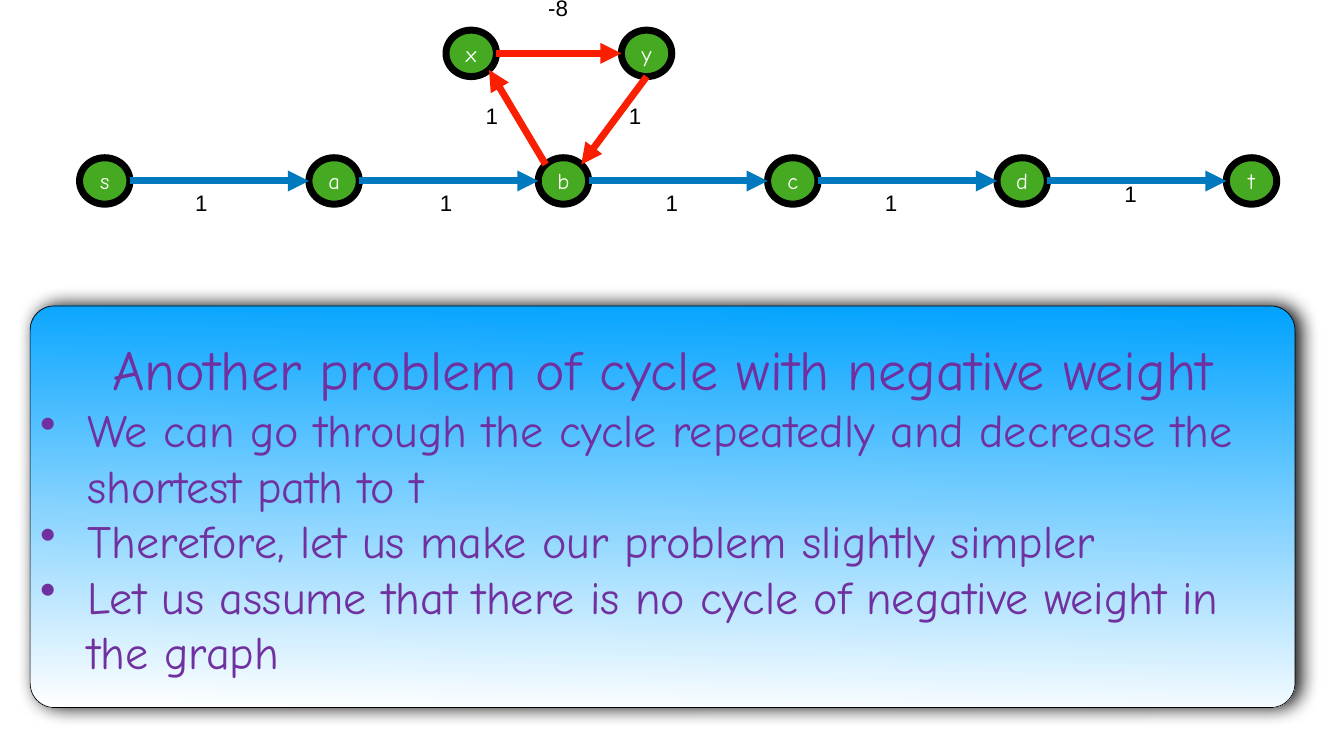
from dataclasses import dataclass
from lxml.etree import SubElement as Sub
from pptx import Presentation
from pptx.dml.color import RGBColor as Rgb
from pptx.enum.shapes import MSO_CONNECTOR as Link, MSO_SHAPE as Shape
from pptx.enum.text import MSO_ANCHOR as Anchor, PP_ALIGN as Align
from pptx.oxml.ns import qn
from pptx.util import Cm, Pt


@dataclass(frozen=True)
class Theme:
    node: str = "45AA21"
    black: str = "000000"
    white: str = "FFFFFF"
    blue: str = "0079BF"
    red: str = "FA1F00"
    sky: str = "00A2FF"
    purple: str = "7030A0"
    hand: str = "Comic Neue"
    plain: str = "Arial"
    small: int = 32
    body: int = 66
    title: int = 80
    thick: int = 10


THEME = Theme()
WIDE, HIGH = 2.54, 2.34    # node size in cm
DIAG = 0.5 ** 0.5          # part of the radius at 45 degrees


def style(para, face, size, color):
    font = para.font
    font.name, font.size = face, Pt(size)
    font.color.rgb = Rgb.from_string(color)


def frame(shape):
    text = shape.text_frame
    text.word_wrap = True
    text.vertical_anchor = Anchor.MIDDLE
    text.margin_left = text.margin_right = Cm(0.15)
    text.margin_top = text.margin_bottom = Cm(0.15)
    return text


def outline(shape, color, width):
    shape.line.color.rgb = Rgb.from_string(color)
    shape.line.width = Pt(width)


def add_node(slide, name, left, top):
    """Draw a graph node and return its centre."""
    node = slide.shapes.add_shape(
        Shape.OVAL, Cm(left), Cm(top), Cm(WIDE), Cm(HIGH))
    node.shadow.inherit = False
    node.fill.solid()
    node.fill.fore_color.rgb = Rgb.from_string(THEME.node)
    outline(node, THEME.black, THEME.thick)
    para = frame(node).paragraphs[0]
    para.text, para.alignment = name, Align.CENTER
    style(para, THEME.hand, THEME.small, THEME.white)
    return left + WIDE / 2, top + HIGH / 2


def port(mid, across, down):
    """Point on a node's rim, given in parts of its radii."""
    return Cm(mid[0] + across * WIDE / 2), Cm(mid[1] + down * HIGH / 2)


def add_edge(slide, start, end, color):
    edge = slide.shapes.add_connector(Link.STRAIGHT, *start, *end)
    outline(edge, color, THEME.thick)
    Sub(edge.line._get_or_add_ln(), qn("a:tailEnd"), type="triangle")
    Sub(edge._element.spPr, qn("a:effectLst"))


def add_cost(slide, cost, left, top):
    box = slide.shapes.add_textbox(Cm(left), Cm(top), Cm(1.37), Cm(3.12))
    para = frame(box).paragraphs[0]
    para.text, para.line_spacing = cost, 0.9
    style(para, THEME.plain, THEME.small, THEME.black)


def add_glow(shape):
    shape.shadow.inherit = False
    effects = shape._element.spPr.find(qn("a:effectLst"))
    glow = Sub(effects, qn("a:outerShdw"), blurRad=str(Pt(28)),
               dist=str(Pt(9)), dir="0", algn="ctr", rotWithShape="0")
    color = Sub(glow, qn("a:srgbClr"), val=THEME.black)
    Sub(color, qn("a:alpha"), val="97000")


def add_panel(slide, title, points):
    panel = slide.shapes.add_shape(
        Shape.ROUNDED_RECTANGLE, Cm(1.52), Cm(15.42), Cm(63.75), Cm(20.24))
    panel.adjustments[0] = 0.06
    panel.fill.gradient()
    panel.fill.gradient_angle = 269
    for stop, color in zip(panel.fill.gradient_stops, (THEME.sky, THEME.white)):
        stop.color.rgb = Rgb.from_string(color)
    outline(panel, THEME.black, 1)
    add_glow(panel)

    text = frame(panel)
    head = text.paragraphs[0]
    head.text, head.alignment = title, Align.CENTER
    style(head, THEME.hand, THEME.title, THEME.purple)
    for point in points:
        para = text.add_paragraph()
        para.text, para.alignment = point, Align.LEFT
        props = para._p.get_or_add_pPr()
        props.set("marL", str(Cm(2.39)))
        props.set("indent", str(-Cm(2.39)))
        Sub(props, qn("a:buChar"), char="•")
        style(para, THEME.hand, THEME.body, THEME.purple)


def main():
    deck = Presentation()
    deck.slide_width, deck.slide_height = Cm(67.74), Cm(38.1)
    slide = deck.slides.add_slide(deck.slide_layouts[6])

    # Path from s to t
    row = [add_node(slide, name, 4.01 + i * 11.56, 7.95)
           for i, name in enumerate("sabcdt")]
    for here, there in zip(row, row[1:]):
        add_edge(slide, port(here, 1, 0), port(there, -1, 0), THEME.blue)

    # Cycle through b, x and y
    b = row[2]
    x = add_node(slide, "x", 22.48, 1.52)
    y = add_node(slide, "y", 31.32, 1.52)
    for start, end in (
        (port(b, -DIAG, -DIAG), port(x, DIAG, DIAG)),
        (port(x, 1, 0), port(y, -1, 0)),
        (port(y, 0, 1), port(b, DIAG, -DIAG)),
    ):
        add_edge(slide, start, end, THEME.red)

    # Edge weights
    for cost, left, top in (
        ("1", 9.68, 8.71), ("1", 22.02, 8.71), ("1", 33.4, 8.71),
        ("1", 44.45, 8.71), ("1", 56.52, 8.28),
        ("1", 24.33, 4.34), ("-8", 27.48, -1.09), ("1", 31.55, 4.34),
    ):
        add_cost(slide, cost, left, top)

    # Explanation
    add_panel(slide, "Another problem of cycle with negative weight", (
        "We can go through the cycle repeatedly and decrease the "
        "shortest path to t",
        "Therefore, let us make our problem slightly simpler",
        "Let us assume that there is no cycle of negative weight in the graph",
    ))
    deck.save("out.pptx")


if __name__ == "__main__":
    main()
